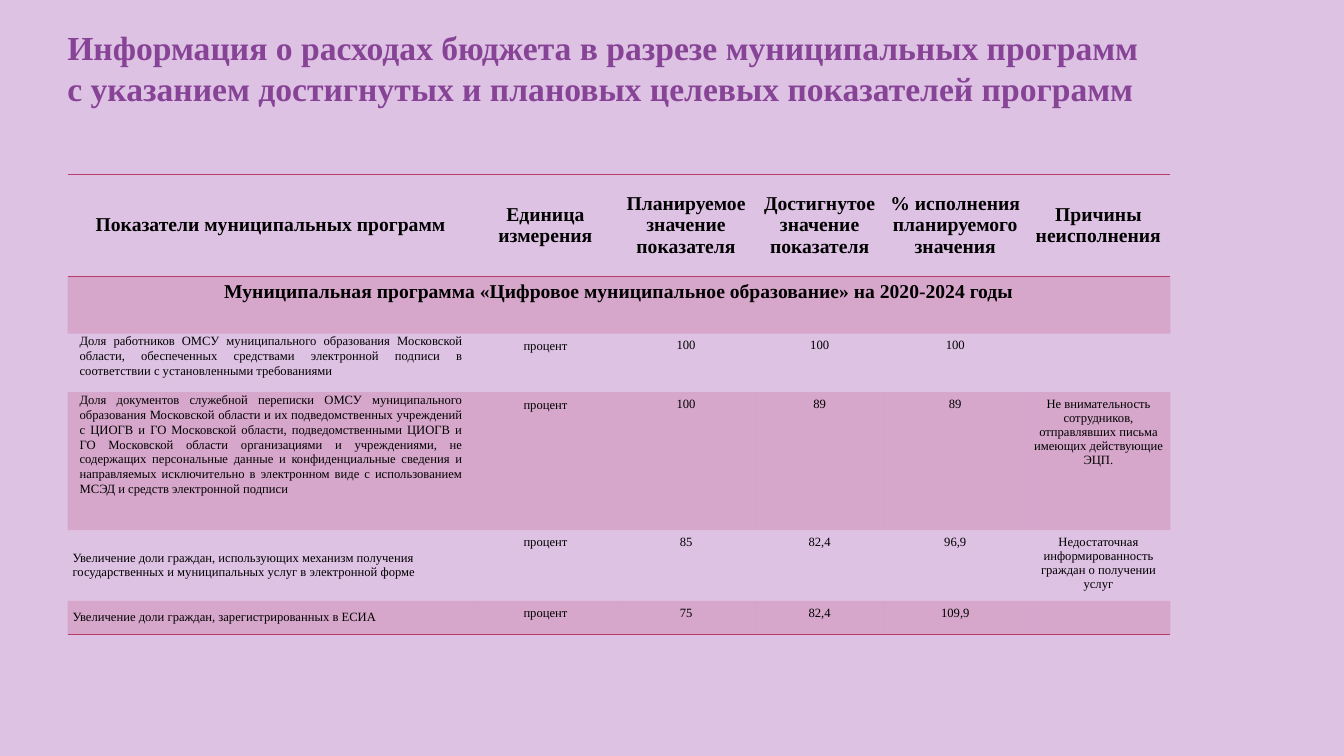
from dataclasses import dataclass

from lxml.etree import SubElement
from pptx import Presentation
from pptx.dml.color import RGBColor
from pptx.enum.text import MSO_ANCHOR as Anchor, MSO_AUTO_SIZE as AutoSize, PP_ALIGN as Align
from pptx.oxml.ns import qn
from pptx.slide import Slide
from pptx.table import _Cell as Cell
from pptx.text.text import _Paragraph as Paragraph
from pptx.util import Inches, Pt

LILAC = RGBColor(0xDE, 0xC2, 0xE4)
PURPLE = RGBColor(0x87, 0x43, 0x96)
CRIMSON = RGBColor(0xB8, 0x3D, 0x68)
BLACK = RGBColor(0, 0, 0)
FONT = "Times New Roman"
PLAIN_TABLE_STYLE = "{2D5ABB26-0587-4C30-8999-92F81FD0307C}"
BAND_OPACITY = 20

TITLE = ("Информация о расходах бюджета в разрезе муниципальных программ",
         "с указанием достигнутых и плановых целевых показателей программ")
HEADINGS = ("Показатели муниципальных программ", "Единица измерения",
            "Планируемое значение показателя", "Достигнутое значение показателя",
            "% исполнения планируемого значения", "Причины неисполнения")
PROGRAM = "Муниципальная программа «Цифровое муниципальное образование» на 2020-2024 годы"
COLUMN_WIDTHS = (4.03, 1.42, 1.37, 1.28, 1.41, 1.43)
HEADING_HEIGHT, PROGRAM_HEIGHT = 1.01, 0.57


@dataclass
class Indicator:
    name: str
    planned: str
    achieved: str
    percent: str
    height: float
    reason: str = ""
    justified: bool = False
    unit: str = "процент"


INDICATORS = (
    Indicator("Доля работников ОМСУ муниципального образования Московской области, "
              "обеспеченных средствами электронной подписи в соответствии с "
              "установленными требованиями",
              "100", "100", "100", 0.58, justified=True),
    Indicator("Доля документов служебной переписки ОМСУ муниципального образования "
              "Московской области и их подведомственных учреждений с ЦИОГВ и ГО "
              "Московской области, подведомственными ЦИОГВ и ГО Московской области "
              "организациями и учреждениями, не содержащих персональные данные и "
              "конфиденциальные сведения и направляемых исключительно в электронном "
              "виде с использованием МСЭД и средств электронной подписи",
              "100", "89", "89", 1.37,
              "Не внимательность сотрудников, отправлявших письма имеющих действующие ЭЦП.",
              justified=True),
    Indicator("Увеличение доли граждан, использующих механизм получения государственных "
              "и муниципальных услуг в электронной форме",
              "85", "82,4", "96,9", 0.7,
              "Недостаточная информированность граждан о получении услуг"),
    Indicator("Увеличение доли граждан, зарегистрированных в ЕСИА",
              "75", "82,4", "109,9", 0.33),
)


def add_text(para: Paragraph, text: str, *, size: float, bold: bool = False,
             color: RGBColor = BLACK) -> None:
    span = para.add_run()
    span.text = text
    span.font.name = FONT
    span.font.size = Pt(size)
    span.font.bold = bold
    span.font.color.rgb = color


def add_border(cell: Cell, side: str) -> None:
    line = SubElement(cell._tc.get_or_add_tcPr(), qn(f"a:ln{side}"), w=str(Pt(1)))
    fill = SubElement(line, qn("a:solidFill"))
    SubElement(fill, qn("a:srgbClr"), val=str(CRIMSON))


def fill_cell(cell: Cell, text: str, *, size: float = 9, bold: bool = False,
              align: Align = Align.CENTER, anchor: Anchor = Anchor.TOP,
              side_inset: float = 0.05, end_inset: float = 0.05,
              spacing: float = 1.0, banded: bool = False, borders: str = "") -> None:
    cell.margin_left = cell.margin_right = Inches(side_inset)
    cell.margin_top = cell.margin_bottom = Inches(end_inset)
    cell.vertical_anchor = anchor
    para = cell.text_frame.paragraphs[0]
    para.alignment = align
    para.line_spacing = spacing
    if text:
        add_text(para, text, size=size, bold=bold)
    else:
        # Keeps an empty cell from stretching its row
        SubElement(para._p, qn("a:endParaRPr"), sz=str(size * 100))
    for side in borders:
        add_border(cell, side)
    if banded:
        cell.fill.solid()
        cell.fill.fore_color.rgb = CRIMSON
        tint = cell._tc.tcPr.find(f"{qn('a:solidFill')}/{qn('a:srgbClr')}")
        SubElement(tint, qn("a:alpha"), val=str(BAND_OPACITY * 1000))
    else:
        cell.fill.background()


def add_title(page: Slide) -> None:
    box = page.shapes.add_textbox(Inches(0.57), Inches(0.22), Inches(10.94), Inches(0.91))
    box.text_frame.word_wrap = True
    box.text_frame.auto_size = AutoSize.SHAPE_TO_FIT_TEXT
    para = box.text_frame.paragraphs[0]
    for index, line in enumerate(TITLE):
        if index:
            para.add_line_break()
        add_text(para, line, size=24, bold=True, color=PURPLE)


def add_indicator_table(page: Slide) -> None:
    heights = [HEADING_HEIGHT, PROGRAM_HEIGHT, *(item.height for item in INDICATORS)]
    table = page.shapes.add_table(
        len(heights), len(COLUMN_WIDTHS), Inches(0.67), Inches(1.73),
        Inches(sum(COLUMN_WIDTHS)), Inches(sum(heights))).table
    table.first_row = table.horz_banding = False
    table._tbl.tblPr.find(qn("a:tableStyleId")).text = PLAIN_TABLE_STYLE
    for column, width in zip(table.columns, COLUMN_WIDTHS):
        column.width = Inches(width)
    for row, height in zip(table.rows, heights):
        row.height = Inches(height)

    # Headings and the program row
    for column, heading in enumerate(HEADINGS):
        fill_cell(table.cell(0, column), heading, size=14, bold=True,
                  anchor=Anchor.MIDDLE, borders="TB")
    program = table.cell(1, 0)
    program.merge(table.cell(1, len(HEADINGS) - 1))
    fill_cell(program, PROGRAM, size=14, bold=True, banded=True)

    # Indicators, every second one banded
    for index, item in enumerate(INDICATORS):
        cells = table.rows[index + 2].cells
        banded = index % 2 == 1
        borders = "B" if item is INDICATORS[-1] else ""
        spacing = 1.07 if item.justified else 1.0
        if item.justified:
            fill_cell(cells[0], item.name, align=Align.JUSTIFY, side_inset=0.12,
                      end_inset=0, spacing=spacing, banded=banded, borders=borders)
        else:
            fill_cell(cells[0], item.name, align=Align.LEFT, anchor=Anchor.MIDDLE,
                      banded=banded, borders=borders)
        fill_cell(cells[1], item.unit, spacing=spacing, banded=banded, borders=borders)
        values = (item.planned, item.achieved, item.percent, item.reason)
        for column, value in enumerate(values, start=2):
            fill_cell(cells[column], value, banded=banded, borders=borders)


def main() -> None:
    deck = Presentation()
    deck.slide_width, deck.slide_height = Inches(13.33), Inches(7.5)
    page = deck.slides.add_slide(deck.slide_layouts[6])
    page.background.fill.solid()
    page.background.fill.fore_color.rgb = LILAC
    add_title(page)
    add_indicator_table(page)
    deck.save("out.pptx")


if __name__ == "__main__":
    main()
